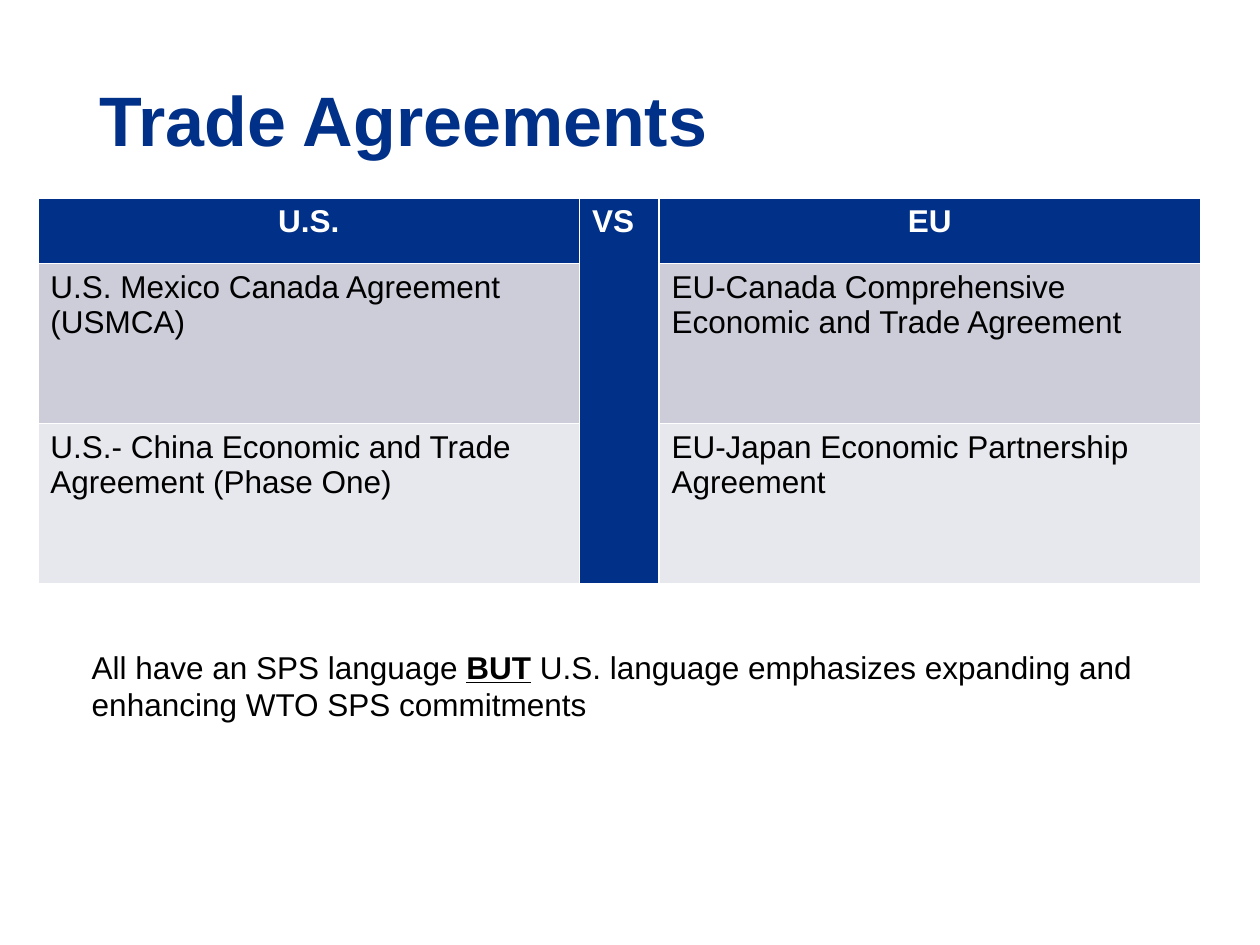
"""Build a slide comparing U.S. and EU trade agreements."""
from pptx import Presentation
from pptx.dml.color import RGBColor
from pptx.enum.text import MSO_ANCHOR, MSO_AUTO_SIZE, PP_ALIGN
from pptx.util import Inches, Pt

HEADING = "Trade Agreements"
AGREEMENTS = [
    ("U.S.", "VS", "EU"),
    ("U.S. Mexico Canada Agreement (USMCA)", "",
     "EU-Canada Comprehensive Economic and Trade Agreement"),
    ("U.S.- China Economic and Trade Agreement (Phase One)", "",
     "EU-Japan Economic Partnership Agreement"),
]
SUMMARY = [
    ("All have an SPS language ", {}),
    ("BUT", {"bold": True, "underline": True}),
    (" ", {"bold": True}),
    ("U.S. language emphasizes expanding and enhancing WTO SPS commitments", {}),
]
COLORS = {"navy": "003087", "white": "FFFFFF", "black": "000000",
          "gray": "CCCDD9", "pale": "E7E8ED"}
ROW_FILLS = ("navy", "gray", "pale")
COLUMN_WIDTHS = (4.3, 0.63, 4.3)
ROW_HEIGHTS = (0.52, 1.27, 1.27)
TITLE_BOX = (0.69, 0.4, 8.62, 1.17)
TABLE_BOX = (0.3, 1.57, sum(COLUMN_WIDTHS), sum(ROW_HEIGHTS))
SUMMARY_BOX = (0.63, 5.09, 8.57, 0.71)
BODY = {"name": "Arial", "size": Pt(18), "bold": False}
STRONG = BODY | {"bold": True}
TITLE = STRONG | {"size": Pt(40)}


def apply_format(font, values, color):
    for attribute, value in values.items():
        setattr(font, attribute, value)
    font.color.rgb = RGBColor.from_string(COLORS[color])


def inches(box):
    return [Inches(length) for length in box]


def add_title(slide):
    title = slide.shapes.title
    title.left, title.top, title.width, title.height = inches(TITLE_BOX)
    frame = title.text_frame
    frame.text = HEADING
    frame.auto_size = MSO_AUTO_SIZE.NONE
    frame.vertical_anchor = MSO_ANCHOR.MIDDLE
    line = frame.paragraphs[0]
    line.alignment = PP_ALIGN.LEFT
    line.line_spacing = 0.9
    apply_format(line.runs[0].font, TITLE, "navy")


def add_agreements(slide):
    table = slide.shapes.add_table(
        len(ROW_HEIGHTS), len(COLUMN_WIDTHS), *inches(TABLE_BOX)).table
    for column, width in zip(table.columns, COLUMN_WIDTHS):
        column.width = Inches(width)
    for r, (labels, height) in enumerate(zip(AGREEMENTS, ROW_HEIGHTS)):
        table.rows[r].height = Inches(height)
        for c, label in enumerate(labels):
            cell = table.cell(r, c)
            cell.fill.solid()
            fill = "navy" if c == 1 else ROW_FILLS[r]
            cell.fill.fore_color.rgb = RGBColor.from_string(COLORS[fill])
            line = cell.text_frame.paragraphs[0]
            if r == 0 and c != 1:
                line.alignment = PP_ALIGN.CENTER
            if label:
                run = line.add_run()
                run.text = label
                apply_format(run.font, BODY if r else STRONG,
                             "black" if r else "white")
    table.cell(0, 1).merge(table.cell(2, 1))


def add_summary(slide):
    frame = slide.shapes.add_textbox(*inches(SUMMARY_BOX)).text_frame
    frame.word_wrap = True
    frame.auto_size = MSO_AUTO_SIZE.SHAPE_TO_FIT_TEXT
    for words, emphasis in SUMMARY:
        run = frame.paragraphs[0].add_run()
        run.text = words
        apply_format(run.font, BODY | emphasis, "black")


def main():
    deck = Presentation()
    deck.slide_width, deck.slide_height = inches((10, 7.5))
    slide = deck.slides.add_slide(deck.slide_layouts.get_by_name("Title Only"))
    add_title(slide)
    add_agreements(slide)
    add_summary(slide)
    deck.save("out.pptx")


if __name__ == "__main__":
    main()
